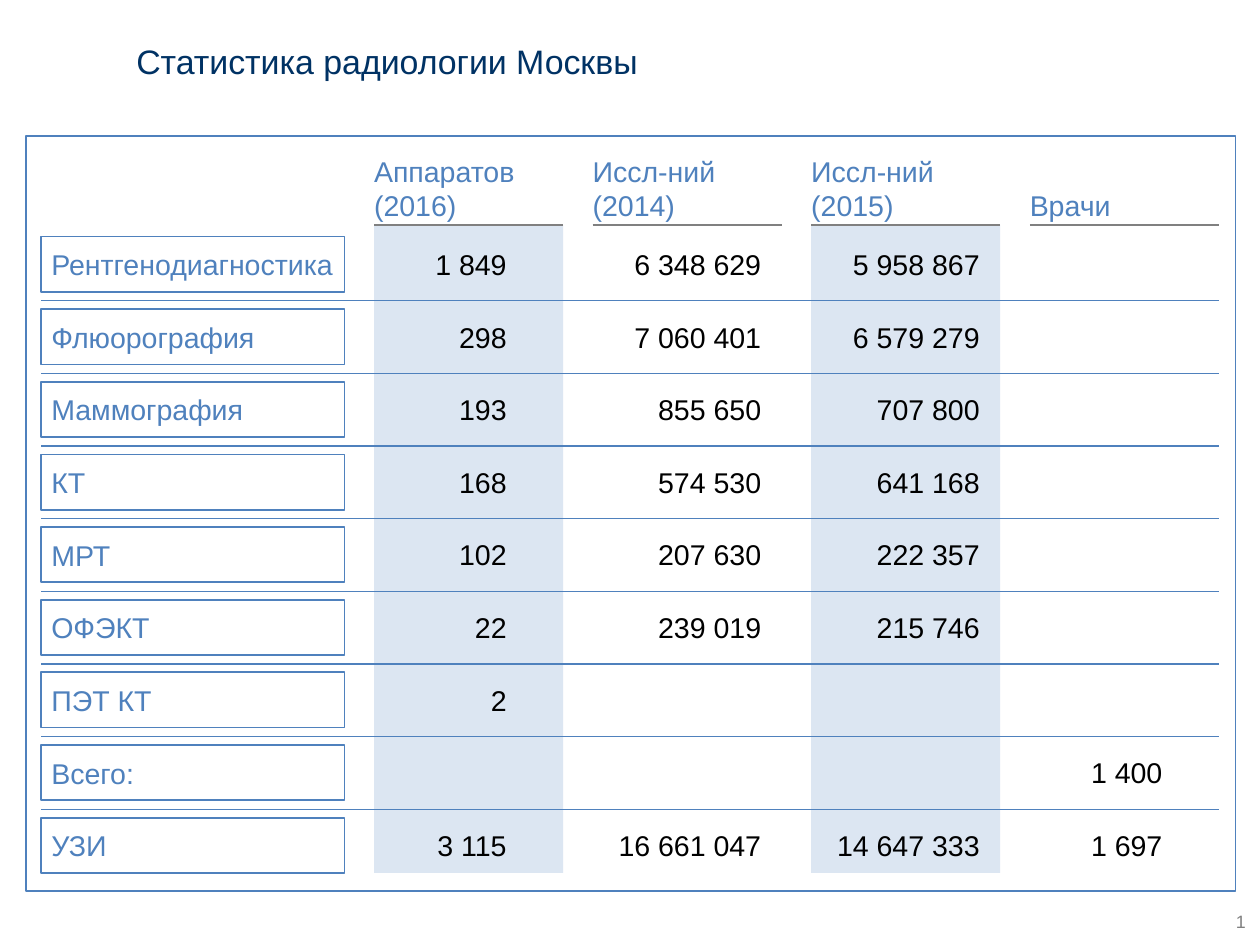
"""Build the slide with Moscow radiology statistics."""
from lxml.etree import SubElement
from pptx import Presentation
from pptx.dml.color import RGBColor
from pptx.enum.shapes import MSO_CONNECTOR, MSO_SHAPE
from pptx.enum.text import MSO_ANCHOR as Anchor, PP_ALIGN as Align
from pptx.oxml.ns import qn
from pptx.util import Inches, Pt

TITLE = "Статистика радиологии Москвы"
PAGE_NUMBER = "1"
# header, shaded, left offset and width of the values
COLUMNS = [
    ("Аппаратов (2016)", True, 0.44, 0.59),
    ("Иссл-ний (2014)", False, 0.17, 1.14),
    ("Иссл-ний (2015)", True, 0.17, 1.14),
    ("Врачи", False, 0.44, 0.59),
]
ROWS = [
    ("Рентгенодиагностика", "1 849", "6 348 629", "5 958 867", ""),
    ("Флюорография", "298", "7 060 401", "6 579 279", ""),
    ("Маммография", "193", "855 650", "707 800", ""),
    ("КТ", "168", "574 530", "641 168", ""),
    ("МРТ", "102", "207 630", "222 357", ""),
    ("ОФЭКТ", "22", "239 019", "215 746", ""),
    ("ПЭТ КТ", "2", "", "", ""),
    ("Всего:", "", "", "", "1 400"),
    ("УЗИ", "3 115", "16 661 047", "14 647 333", "1 697"),
]

FONT = "Arial"
NAVY = RGBColor(0x00, 0x32, 0x64)
BLUE = RGBColor(0x4F, 0x81, 0xBD)
PALE_BLUE = RGBColor(0xDC, 0xE6, 0xF2)
GRAY = RGBColor(0x80, 0x80, 0x80)
BLACK = RGBColor(0x00, 0x00, 0x00)
WHITE = RGBColor(0xFF, 0xFF, 0xFF)

LEFT, RIGHT = 0.32, 9.48
COLUMN_LEFT, COLUMN_STEP, COLUMN_WIDTH = 2.91, 1.7, 1.47
HEADER_TOP, HEADER_BOTTOM = 1.19, 1.75
ROW_TOP, ROW_STEP, ROW_HEIGHT = 1.84, 0.565, 0.43
LABEL_WIDTH, RULE_OFFSET = 2.36, 0.5
VALUE_OFFSET, VALUE_HEIGHT = 0.08, 0.27


def set_text(shape, text, size, color, align=Align.LEFT, anchor=Anchor.MIDDLE,
             inset=0, bottom=0, wrap=True):
    frame = shape.text_frame
    frame.text = text
    frame.word_wrap = wrap
    frame.vertical_anchor = anchor
    frame.margin_left = frame.margin_right = frame.margin_top = Inches(inset)
    frame.margin_bottom = Inches(bottom or inset)
    paragraph = frame.paragraphs[0]
    paragraph.alignment = align
    font = paragraph.runs[0].font
    font.name, font.size, font.color.rgb = FONT, Pt(size), color


def add_text(slide, box, *args, **options):
    set_text(slide.shapes.add_textbox(*map(Inches, box)), *args, **options)


def add_box(slide, box, fill=None, line=None):
    shape = slide.shapes.add_shape(MSO_SHAPE.RECTANGLE, *map(Inches, box))
    shape.shadow.inherit = False
    if fill is None:
        shape.fill.background()
    else:
        shape.fill.solid()
        shape.fill.fore_color.rgb = fill
    if line is None:
        shape.line.fill.background()
    else:
        shape.line.color.rgb = line
        shape.line.width = Pt(1)
    return shape


def add_rule(slide, start, end, y, color):
    rule = slide.shapes.add_connector(
        MSO_CONNECTOR.STRAIGHT, Inches(start), Inches(y), Inches(end), Inches(y))
    rule.line.color.rgb = color
    rule.line.width = Pt(0.75)
    SubElement(rule._element.spPr, qn("a:effectLst"))


def main():
    prs = Presentation()
    prs.slide_width, prs.slide_height = Inches(9.8), Inches(7.35)
    slide = prs.slides.add_slide(prs.slide_layouts[6])

    add_text(slide, (9.52, 7.08, 0.17, 0.17), PAGE_NUMBER, 10, GRAY, Align.RIGHT, wrap=False)
    add_text(slide, (1.06, 0.31, 7.92, 0.32), TITLE, 19, NAVY)

    column_lefts = [COLUMN_LEFT + i * COLUMN_STEP for i in range(len(COLUMNS))]
    row_tops = [ROW_TOP + i * ROW_STEP for i in range(len(ROWS))]
    band_height = row_tops[-1] + ROW_HEIGHT - HEADER_BOTTOM

    for left, (_, shaded, _, _) in zip(column_lefts, COLUMNS):
        if shaded:
            add_box(slide, (left, HEADER_BOTTOM, COLUMN_WIDTH, band_height), PALE_BLUE)
    add_box(slide, (0.2, 1.06, 9.41, 5.87), line=BLUE)

    for left, (header, *_) in zip(column_lefts, COLUMNS):
        add_rule(slide, left, left + COLUMN_WIDTH, HEADER_BOTTOM, GRAY)
        add_text(slide, (left, HEADER_TOP, COLUMN_WIDTH, HEADER_BOTTOM - HEADER_TOP),
                 header, 16, BLUE, anchor=Anchor.BOTTOM, bottom=0.02)

    for top, (label, *values) in zip(row_tops, ROWS):
        label_box = add_box(slide, (LEFT, top, LABEL_WIDTH, ROW_HEIGHT), WHITE, BLUE)
        set_text(label_box, label, 16, BLUE, inset=0.08)
        for left, (_, _, offset, width), value in zip(column_lefts, COLUMNS, values):
            if value:
                add_text(slide, (left + offset, top + VALUE_OFFSET, width, VALUE_HEIGHT),
                         value, 16, BLACK, Align.RIGHT, Anchor.TOP)

    for top in row_tops[:-1]:
        add_rule(slide, LEFT, RIGHT, top + RULE_OFFSET, BLUE)

    prs.save("out.pptx")


if __name__ == "__main__":
    main()
